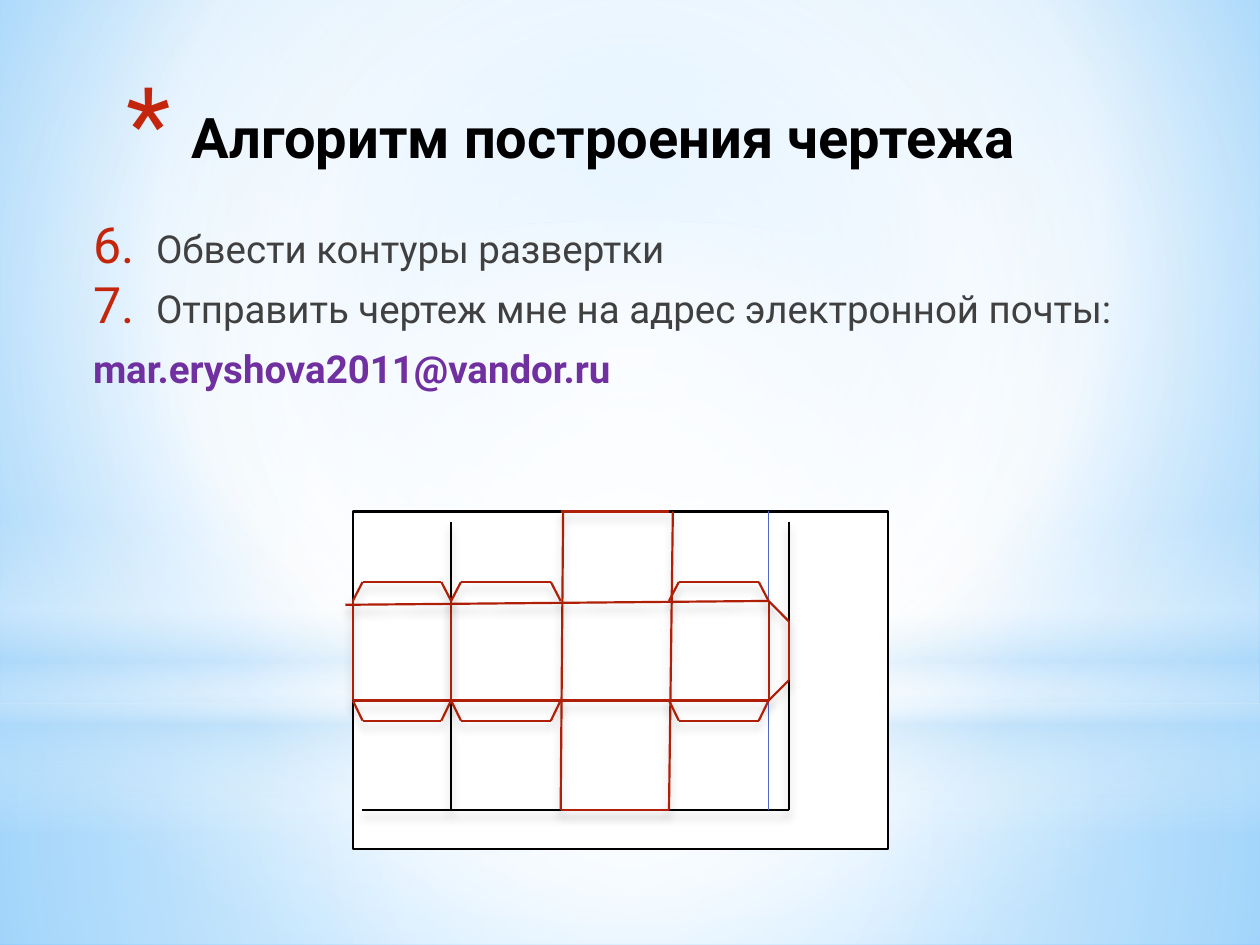
from lxml import etree
from pptx import Presentation
from pptx.dml.color import RGBColor
from pptx.enum.shapes import MSO_CONNECTOR, MSO_SHAPE
from pptx.oxml import parse_xml
from pptx.oxml.ns import nsdecls, qn
from pptx.util import Pt

COLORS = {
    "white": "FFFFFF", "black": "000000", "haze": "B4DCFA",
    "sky": "9ED5FF", "deep_sky": "5BB9FF", "bullet": "C3260C",
    "body": "404040", "mail": "7030A0", "contour": "B01F07", "fold": "4E67C8",
}
FONT = "Roboto"


def set_gradient(parent, stops, center=None):
    stop_xml = "".join(
        f'<a:gs pos="{pos * 1000}"><a:srgbClr val="{COLORS[color]}">'
        f'<a:alpha val="{alpha * 1000}"/></a:srgbClr></a:gs>'
        for pos, color, alpha in stops)
    if center:
        sides = " ".join(f'{side}="{value * 1000}"' for side, value in zip("ltrb", center))
        direction = f'<a:path path="circle"><a:fillToRect {sides}/></a:path>'
    else:
        direction = '<a:lin ang="5400000" scaled="0"/>'
    gradient = parse_xml(
        f'<a:gradFill {nsdecls("a")} rotWithShape="1"><a:gsLst>{stop_xml}</a:gsLst>'
        f'{direction}</a:gradFill>')
    parent.replace(parent.find(qn("a:solidFill")), gradient)


def draw_line(start, end, color, width=1.25, shadow=True):
    line = slide.shapes.add_connector(
        MSO_CONNECTOR.STRAIGHT, *(Pt(value) for value in start + end))
    line.line.color.rgb = RGBColor.from_string(COLORS[color])
    line.line.width = Pt(width)
    effects = etree.SubElement(line._element.spPr, qn("a:effectLst"))
    if shadow:
        effects.append(parse_xml(
            f'<a:outerShdw {nsdecls("a")} blurRad="{Pt(5)}" dist="{Pt(4)}" dir="5400000" '
            f'rotWithShape="0"><a:srgbClr val="{COLORS["black"]}">'
            '<a:alpha val="20000"/></a:srgbClr></a:outerShdw>'))


prs = Presentation()
prs.slide_width, prs.slide_height = Pt(720), Pt(540)
slide = prs.slides.add_slide(prs.slide_layouts[6])

slide.background.fill.solid()
slide.background.fill.fore_color.rgb = RGBColor.from_string(COLORS["sky"])
set_gradient(slide._element.find(".//" + qn("p:bgPr")),
             [(0, "sky", 100), (60, "white", 100), (100, "deep_sky", 100)], (20, 10, 20, 60))

middle = (50, 50, 50, 50)
glows = [
    (MSO_SHAPE.RECTANGLE, 401.8, 138.2, middle,
     [(0, "white", 91), (37, "white", 76), (100, "haze", 79)]),
    (MSO_SHAPE.RECTANGLE, 0, 401.8, middle,
     [(0, "white", 89), (48, "white", 62), (100, "haze", 79)]),
    (MSO_SHAPE.RECTANGLE, 296.6, 180, None,
     [(0, "white", 0), (29, "white", 30), (45, "haze", 40),
      (55, "white", 26), (65, "haze", 60), (100, "white", 0)]),
    (MSO_SHAPE.OVAL, 126, 401.8, middle, [(0, "white", 100), (56, "white", 0)]),
]
for outline, top, height, center, stops in glows:
    glow = slide.shapes.add_shape(outline, 0, Pt(top), Pt(720), Pt(height))
    glow.shadow.inherit = False
    glow.line.fill.background()
    glow.fill.solid()
    set_gradient(glow._element.spPr, stops, center)

star = '<a:buChar {} char="*"/>'
number = '<a:buAutoNum {} type="arabicPeriod" startAt="6"/>'
texts = [
    ((65.5, 37.4, 584, 90), 7, 25.2, 25.2, [
        (star, 128, [(" ", 46, "black", True),
                     ("Алгоритм построения чертежа", 32, "black", True)])]),
    ((42.5, 122.4, 612, 357), 6, 39.6, 36, [
        (number, 130, [("Обвести контуры развертки", 22, "body", False)]),
        (number, 130, [("Отправить чертеж мне на адрес электронной почты:", 22, "body", False)]),
        (None, 0, [("mar.eryshova2011@vandor.ru", 22, "mail", True)])]),
]
for bounds, margin_top, margin, hanging, paragraphs in texts:
    frame = slide.shapes.add_textbox(*(Pt(value) for value in bounds)).text_frame
    frame.word_wrap = True
    frame.margin_top = Pt(margin_top)
    for index, (bullet, bullet_size, runs) in enumerate(paragraphs):
        paragraph = frame.add_paragraph() if index else frame.paragraphs[0]
        props = paragraph._p.get_or_add_pPr()
        props.set("marL", str(Pt(margin)))
        props.set("indent", str(-Pt(hanging)))
        if bullet:
            for xml in (f'<a:buClr {{}}><a:srgbClr val="{COLORS["bullet"]}"/></a:buClr>',
                        f'<a:buSzPct {{}} val="{bullet_size * 1000}"/>',
                        f'<a:buFont {{}} typeface="{FONT}"/>', bullet):
                props.append(parse_xml(xml.format(nsdecls("a"))))
        if index:
            paragraph.space_before = Pt(5)
        paragraph.space_after = Pt(3)
        for text, size, color, bold in runs:
            run = paragraph.add_run()
            run.text = text
            run.font.name = FONT
            run.font.size = Pt(size)
            run.font.bold = bold
            run.font.color.rgb = RGBColor.from_string(COLORS[color])

left, right, top, bottom = 201.6, 439.2, 292.3, 463
side_1, side_2, side_3 = 257.8, 320.4, 382.3
fold_top, fold_bottom = 343.4, 400.3
glue_edge, grid_top, flap_inset = 450.7, 298.1, 5.6

sheet = slide.shapes.add_shape(MSO_SHAPE.RECTANGLE, Pt(left), Pt(top), Pt(306), Pt(193))
sheet.shadow.inherit = False
sheet.fill.solid()
sheet.fill.fore_color.rgb = RGBColor.from_string(COLORS["white"])
sheet.line.color.rgb = RGBColor.from_string(COLORS["black"])
sheet.line.width = Pt(1.25)

for start, end in [
    ((glue_edge, grid_top), (glue_edge, bottom)),
    ((206.6, bottom), (glue_edge, bottom)),
    ((side_1, grid_top), (side_1, bottom)),
]:
    draw_line(start, end, "black")

draw_line((right, top), (right, bottom), "fold", 0.75, shadow=False)

contour = [
    ((321.8, top), (side_2, bottom)),
    ((384.5, top), (side_3, bottom)),
    ((197.3, 345.6), (right, fold_top)),
    ((left, fold_bottom), (right, fold_bottom)),
    ((right, fold_top), (glue_edge, 355)),
    ((glue_edge, 355), (glue_edge, 388.8)),
    ((glue_edge, 388.8), (right, fold_bottom)),
    ((side_2, top), (side_3, top)),
    ((side_2, bottom), (side_3, bottom)),
]
contour += [((x, fold_top), (x, fold_bottom)) for x in (left, side_1, right)]
for flap_left, flap_right in [(left, side_1), (side_1, side_2), (side_3, right)]:
    for fold, edge in [(fold_top, 332.6), (fold_bottom, 411.8)]:
        corners = [(flap_left, fold), (flap_left + flap_inset, edge),
                   (flap_right - flap_inset, edge), (flap_right, fold)]
        contour += zip(corners, corners[1:])
for start, end in contour:
    draw_line(start, end, "contour")

prs.save("out.pptx")
